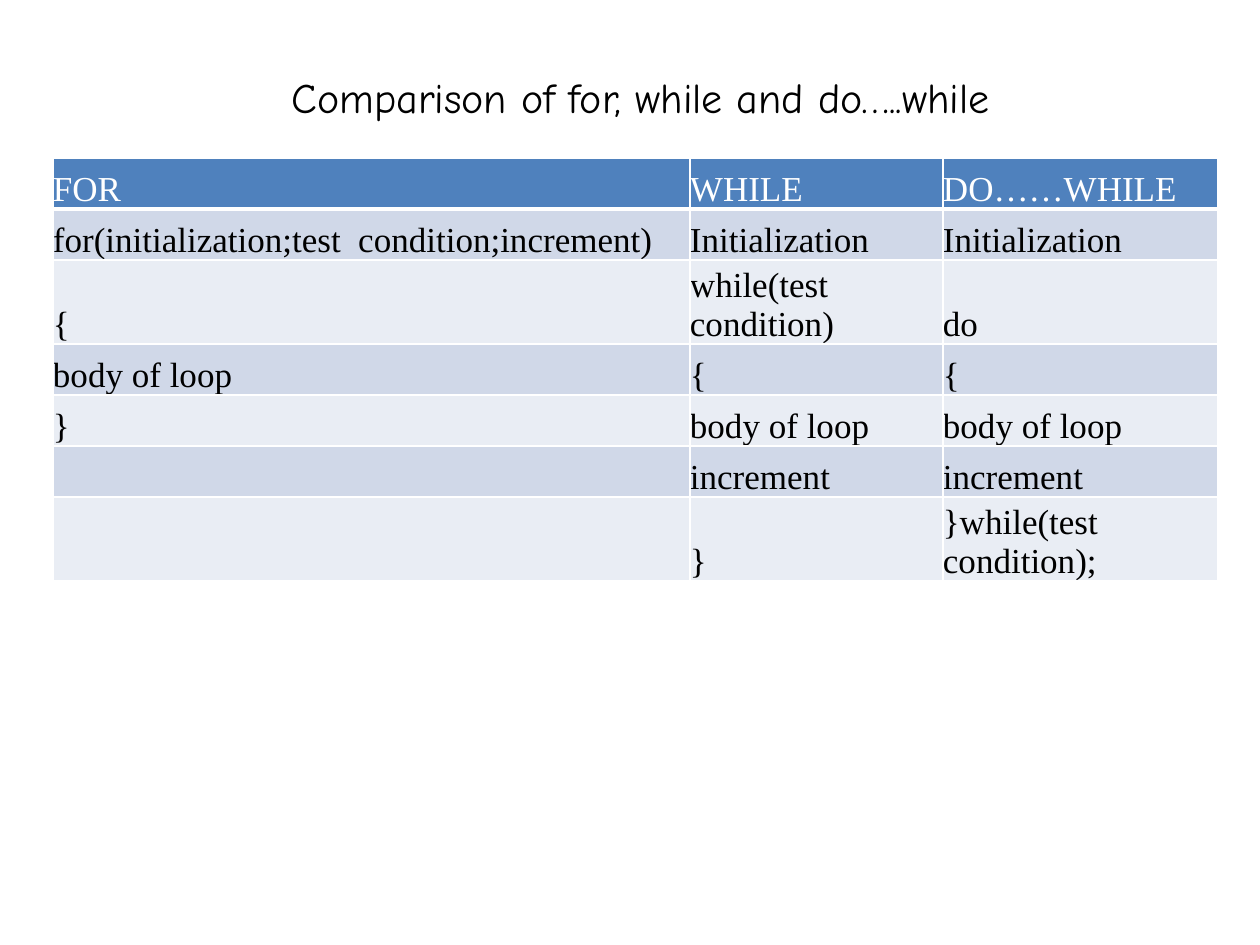
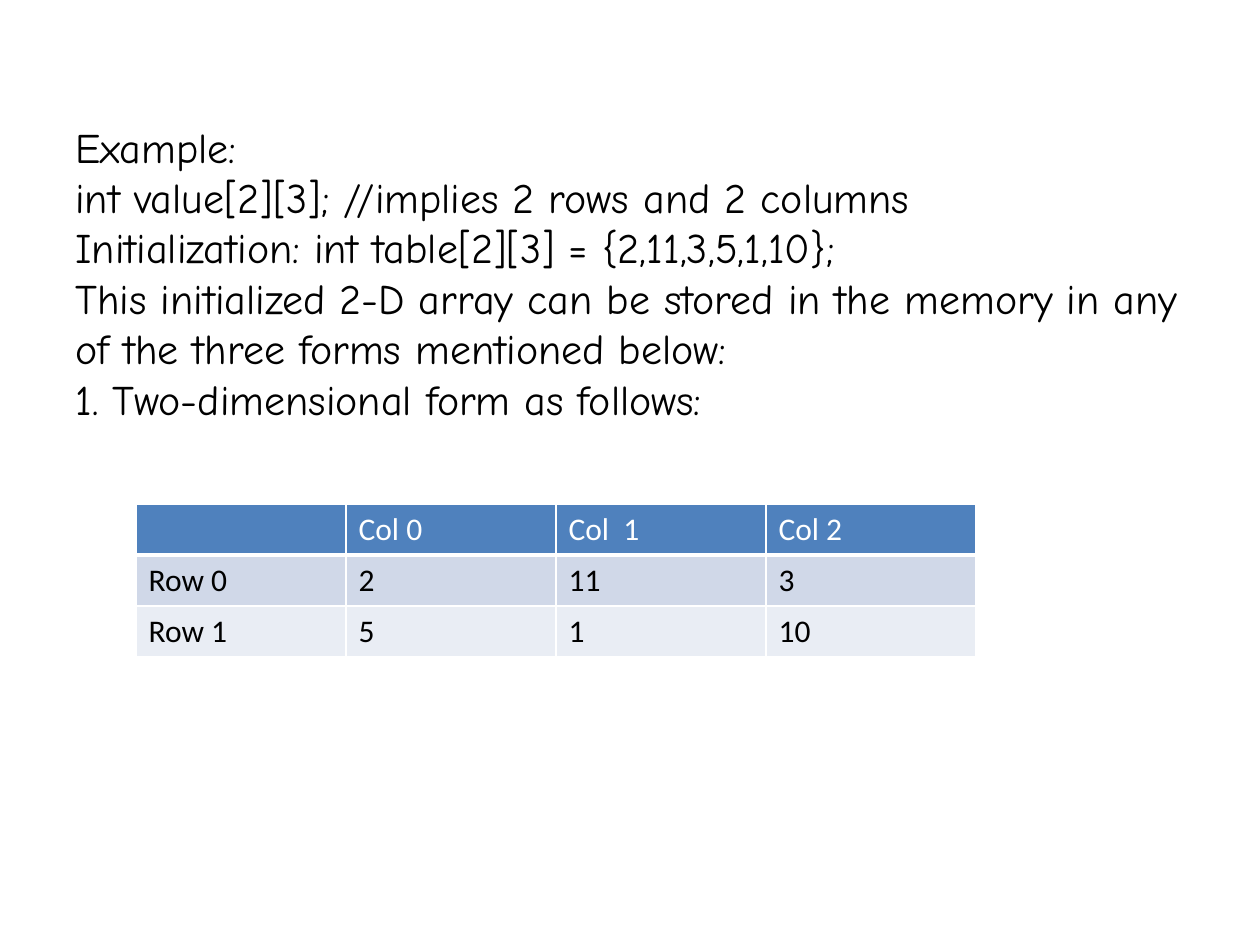
from dataclasses import dataclass

from lxml.etree import SubElement
from pptx import Presentation
from pptx.dml.color import RGBColor
from pptx.enum.text import MSO_ANCHOR, PP_ALIGN
from pptx.oxml.ns import qn
from pptx.util import Pt

SCALE = 914400 / 126  # EMU in one px


@dataclass(frozen=True)
class Theme:
    ink: str = "000000"
    white: str = "FFFFFF"
    head: str = "4F81BD"
    bands: tuple = ("D0D8E8", "E9EDF4")
    title: tuple = ("Comic Neue", 24)
    code: tuple = ("Times New Roman", 20)
    grid: tuple = ("Calibri", 18)
    thin: int = 1
    thick: int = 3


theme = Theme()


def write(para, text, face, tint):
    """Put text in a paragraph and style each of its runs."""
    para.text = text
    name, size = face
    style = {"name": name, "size": Pt(size), "bold": False}
    for run in para.runs:
        for key, value in style.items():
            setattr(run.font, key, value)
        run.font.color.rgb = RGBColor.from_string(tint)


def edge(cell, side, width):
    """Draw one white border of a cell."""
    line = SubElement(cell._tc.get_or_add_tcPr(), qn(f"a:ln{side}"), w=str(Pt(width)))
    fill = SubElement(line, qn("a:solidFill"))
    SubElement(fill, qn("a:srgbClr"), val=theme.white)


# Content of the two slides
pages = [
    {
        "title": "Comparison of for, while and do…..while",
        "align": PP_ALIGN.CENTER,
        "drop": 33,
        "spot": (53, 158),
        "cols": (637, 253, 275),
        "face": theme.code,
        "cell": {
            "vertical_anchor": MSO_ANCHOR.BOTTOM,
            "margin_left": 0,
            "margin_right": 0,
            "margin_top": 0,
            "margin_bottom": 0,
        },
        "rows": [
            ("FOR", "WHILE", "DO……WHILE"),
            ("for(initialization;test  condition;increment)",
             "Initialization", "Initialization"),
            ("{", "while(test condition)", "do"),
            ("body of loop", "{", "{"),
            ("}", "body of loop", "body of loop"),
            ("", "increment", "increment"),
            ("", "}", "}while(test condition);"),
        ],
    },
    {
        "title": "Example:\n"
                 "int value[2][3]; //implies 2 rows and 2 columns\n"
                 "Initialization: int table[2][3] = {2,11,3,5,1,10};\n"
                 "This initialized 2-D array can be stored in the memory "
                 "in any of the three forms mentioned below:\n"
                 "1. Two-dimensional form as follows:",
        "align": PP_ALIGN.LEFT,
        "drop": 83,
        "spot": (136, 504),
        "cols": (210,) * 4,
        "face": theme.grid,
        "cell": {"vertical_anchor": MSO_ANCHOR.TOP},
        "rows": [
            ("", "Col 0", "Col  1", "Col 2"),
            ("Row 0", "2", "11", "3"),
            ("Row 1", "5", "1", "10"),
        ],
    },
]

deck = Presentation()
deck.slide_width, deck.slide_height = int(1260 * SCALE), int(945 * SCALE)
blank = deck.slide_layouts[6]
row_px = 51

for page in pages:
    slide = deck.slides.add_slide(blank)

    # Title text
    box = slide.shapes.add_textbox(*(int(n * SCALE) for n in (63, 38, 1155, 866)))
    frame = box.text_frame
    form = {
        "word_wrap": True,
        "vertical_anchor": MSO_ANCHOR.TOP,
        "margin_top": int(page["drop"] * SCALE),
    }
    for key, value in form.items():
        setattr(frame, key, value)
    para = frame.paragraphs[0]
    para.alignment = page["align"]
    write(para, page["title"], theme.title, theme.ink)

    # Table grid
    rows, cols = page["rows"], page["cols"]
    place = (*page["spot"], sum(cols), row_px * len(rows))
    table = slide.shapes.add_table(
        len(rows), len(cols), *(int(n * SCALE) for n in place)).table
    for col, width in zip(table.columns, cols):
        col.width = int(width * SCALE)
    for row in table.rows:
        row.height = int(row_px * SCALE)

    # Table cells: a header row, then two bands in turn
    for r, texts in enumerate(rows):
        top = r == 0
        back = theme.head if top else theme.bands[(r - 1) % 2]
        tint = theme.white if top else theme.ink
        for c, text in enumerate(texts):
            cell = table.cell(r, c)
            for key, value in page["cell"].items():
                setattr(cell, key, value)
            for side in "LRTB":
                edge(cell, side, theme.thick if top and side == "B" else theme.thin)
            cell.fill.solid()
            cell.fill.fore_color.rgb = RGBColor.from_string(back)
            write(cell.text_frame.paragraphs[0], text, page["face"], tint)

deck.save("out.pptx")
